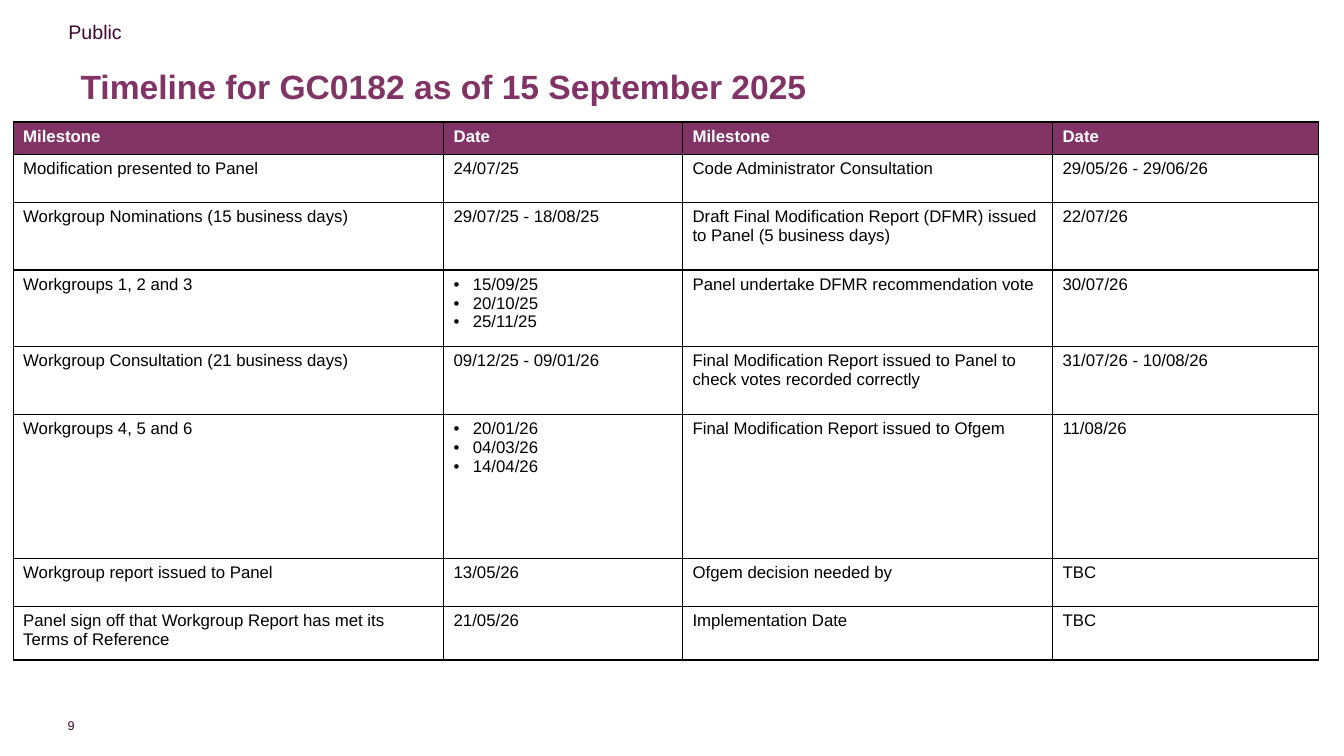
from dataclasses import dataclass

from lxml.etree import SubElement
from pptx import Presentation
from pptx.dml.color import RGBColor
from pptx.enum.text import MSO_ANCHOR, MSO_AUTO_SIZE, PP_ALIGN
from pptx.oxml.ns import qn
from pptx.slide import Slide
from pptx.table import _Cell
from pptx.text.text import _Paragraph
from pptx.util import Inches, Pt


@dataclass(frozen=True)
class Theme:
    font: str = "Arial"
    plum: str = "813366"
    dark_plum: str = "3F0731"
    black: str = "000000"
    white: str = "FFFFFF"
    title_size: int = 24
    label_size: int = 14
    table_size: int = 12
    number_size: int = 9
    border_width: int = 1


@dataclass(frozen=True)
class Label:
    text: str
    left: float
    top: float
    width: float
    height: float
    size: int
    color: str
    bold: bool = False
    anchor: MSO_ANCHOR = MSO_ANCHOR.TOP
    align: PP_ALIGN = PP_ALIGN.LEFT
    inset: tuple[float, float] = (0.1, 0.05)
    wrap: bool = True
    line_spacing: float = 1.0


@dataclass(frozen=True)
class Milestone:
    name: str
    dates: tuple[str, ...]


@dataclass(frozen=True)
class TimelineRow:
    height: float
    left: Milestone
    right: Milestone


THEME = Theme()

LABELS = [
    Label("9", 0.59, 7.12, 0.15, 0.15, THEME.number_size, THEME.dark_plum,
          anchor=MSO_ANCHOR.MIDDLE, align=PP_ALIGN.RIGHT, inset=(0, 0), wrap=False),
    Label("Public", 0.58, 0.15, 5, 0.34, THEME.label_size, THEME.dark_plum),
    Label("Timeline for GC0182 as of 15 September 2025", 0.7, 0.4, 10.62, 0.95,
          THEME.title_size, THEME.plum, bold=True, anchor=MSO_ANCHOR.MIDDLE,
          line_spacing=0.9),
]

TABLE_LEFT, TABLE_TOP = 0.13, 1.21
COLUMN_WIDTHS = [4.27, 2.37, 3.67, 2.64]
BULLET_INDENT = 0.19
HEADING = Milestone("Milestone", ("Date",))

TIMELINE = [
    TimelineRow(0.32, HEADING, HEADING),
    TimelineRow(0.48, Milestone("Modification presented to Panel", ("24/07/25",)),
                Milestone("Code Administrator Consultation", ("29/05/26 - 29/06/26",))),
    TimelineRow(0.67, Milestone("Workgroup Nominations (15 business days)",
                                ("29/07/25 - 18/08/25",)),
                Milestone("Draft Final Modification Report (DFMR) issued to Panel (5 business days)",
                          ("22/07/26",))),
    TimelineRow(0.76, Milestone("Workgroups 1, 2 and 3", ("15/09/25", "20/10/25", "25/11/25")),
                Milestone("Panel undertake DFMR recommendation vote", ("30/07/26",))),
    TimelineRow(0.67, Milestone("Workgroup Consultation (21 business days)",
                                ("09/12/25 - 09/01/26",)),
                Milestone("Final Modification Report issued to Panel to check votes recorded correctly",
                          ("31/07/26 - 10/08/26",))),
    TimelineRow(1.43, Milestone("Workgroups 4, 5 and 6", ("20/01/26", "04/03/26", "14/04/26")),
                Milestone("Final Modification Report issued to Ofgem", ("11/08/26",))),
    TimelineRow(0.48, Milestone("Workgroup report issued to Panel", ("13/05/26",)),
                Milestone("Ofgem decision needed by", ("TBC",))),
    TimelineRow(0.53, Milestone("Panel sign off that Workgroup Report has met its Terms of Reference",
                                ("21/05/26",)),
                Milestone("Implementation Date", ("TBC",))),
]


def style_paragraph(paragraph: _Paragraph, size: int, color: str, bold: bool) -> None:
    font = paragraph.font
    font.name = THEME.font
    font.size = Pt(size)
    font.bold = bold
    font.color.rgb = RGBColor.from_string(color)


def add_label(slide: Slide, label: Label) -> None:
    box = slide.shapes.add_textbox(Inches(label.left), Inches(label.top),
                                   Inches(label.width), Inches(label.height))
    frame = box.text_frame
    frame.word_wrap = label.wrap
    frame.auto_size = MSO_AUTO_SIZE.NONE
    frame.vertical_anchor = label.anchor
    frame.margin_left = frame.margin_right = Inches(label.inset[0])
    frame.margin_top = frame.margin_bottom = Inches(label.inset[1])
    paragraph = frame.paragraphs[0]
    paragraph.text = label.text
    paragraph.alignment = label.align
    paragraph.line_spacing = label.line_spacing
    style_paragraph(paragraph, label.size, label.color, label.bold)


def add_bullet(paragraph: _Paragraph) -> None:
    properties = paragraph._p.get_or_add_pPr()
    properties.set("marL", str(Inches(BULLET_INDENT)))
    properties.set("indent", str(-Inches(BULLET_INDENT)))
    SubElement(properties, qn("a:buFont"), typeface=THEME.font)
    SubElement(properties, qn("a:buChar"), char="•")


def add_borders(cell: _Cell) -> None:
    properties = cell._tc.get_or_add_tcPr()
    for side in ("lnL", "lnR", "lnT", "lnB"):
        line = SubElement(properties, qn(f"a:{side}"), w=str(Pt(THEME.border_width)))
        fill = SubElement(line, qn("a:solidFill"))
        SubElement(fill, qn("a:srgbClr"), val=THEME.black)


def fill_cell(cell: _Cell, lines: tuple[str, ...], is_heading: bool) -> None:
    """Write the lines into the cell, as bullets when there are several."""
    add_borders(cell)
    if is_heading:
        cell.fill.solid()
        cell.fill.fore_color.rgb = RGBColor.from_string(THEME.plum)
    else:
        cell.fill.background()
    cell.text = "\n".join(lines)
    for paragraph in cell.text_frame.paragraphs:
        if len(lines) > 1:
            add_bullet(paragraph)
        color = THEME.white if is_heading else THEME.black
        style_paragraph(paragraph, THEME.table_size, color, is_heading)


def add_timeline(slide: Slide) -> None:
    frame = slide.shapes.add_table(
        len(TIMELINE), len(COLUMN_WIDTHS), Inches(TABLE_LEFT), Inches(TABLE_TOP),
        Inches(sum(COLUMN_WIDTHS)), Inches(sum(row.height for row in TIMELINE)))
    table = frame.table
    table.horz_banding = False
    for column, width in zip(table.columns, COLUMN_WIDTHS):
        column.width = Inches(width)
    for index, (table_row, row) in enumerate(zip(table.rows, TIMELINE)):
        table_row.height = Inches(row.height)
        contents = ((row.left.name,), row.left.dates, (row.right.name,), row.right.dates)
        for cell, lines in zip(table_row.cells, contents):
            fill_cell(cell, lines, is_heading=index == 0)


def main() -> None:
    presentation = Presentation()
    presentation.slide_width = Inches(13.33)
    presentation.slide_height = Inches(7.5)
    slide = presentation.slides.add_slide(presentation.slide_layouts[6])
    for label in LABELS:
        add_label(slide, label)
    add_timeline(slide)
    presentation.save("out.pptx")


if __name__ == "__main__":
    main()
